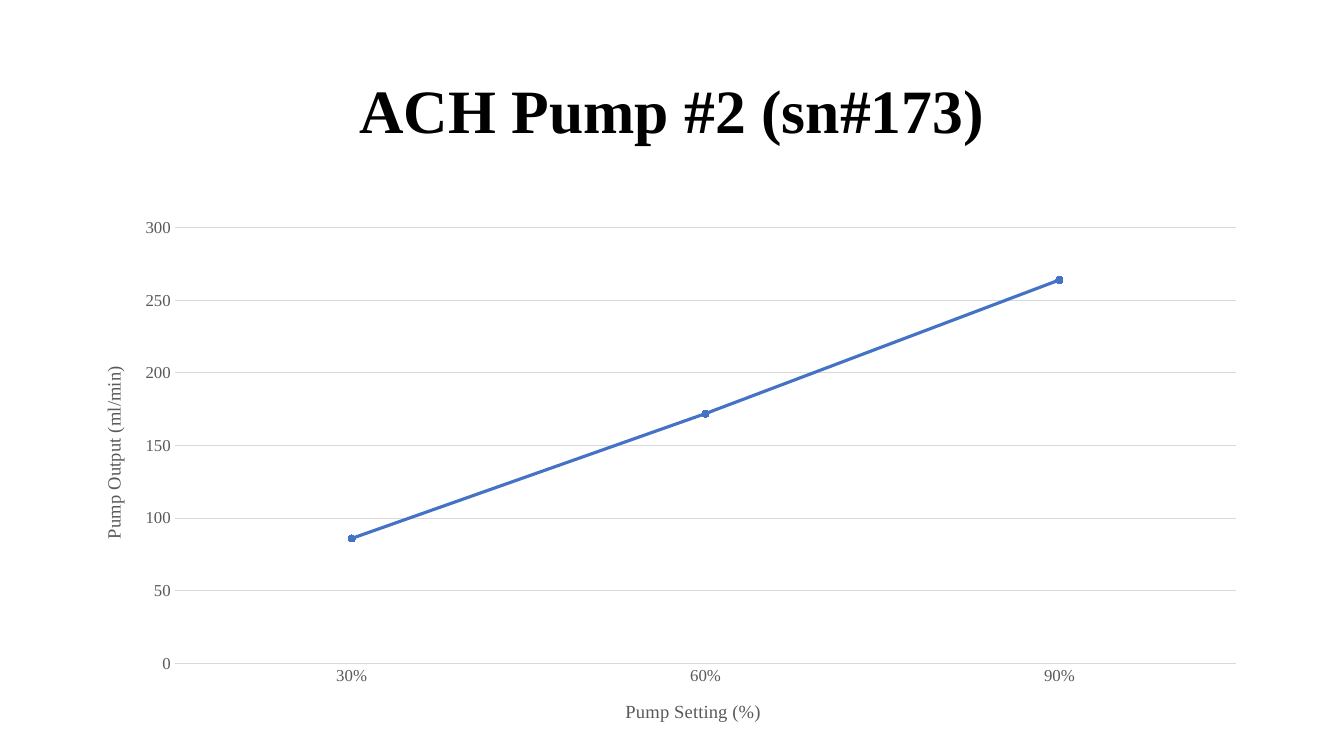
from pptx import Presentation
from pptx.chart.data import CategoryChartData
from pptx.dml.color import RGBColor
from pptx.enum.chart import XL_CHART_TYPE, XL_MARKER_STYLE, XL_TICK_MARK
from pptx.enum.text import MSO_ANCHOR, PP_ALIGN
from pptx.oxml import parse_xml
from pptx.oxml.ns import nsdecls, qn
from pptx.util import Pt

LINE_CHART = XL_CHART_TYPE.LINE_MARKERS_STACKED
CIRCLE = XL_MARKER_STYLE.CIRCLE
NO_TICK = XL_TICK_MARK.NONE
MIDDLE = MSO_ANCHOR.MIDDLE
CENTER = PP_ALIGN.CENTER

FACE = "Times New Roman"
BLACK, GREY, PALE, BLUE = "000000", "595959", "D9D9D9", "4472C4"
LEFT, WIDTH = 66, 828


def color(code):
    return RGBColor.from_string(code)


def style(font, size, code, bold=False):
    font.name, font.size, font.bold = FACE, Pt(size), bold
    font.color.rgb = color(code)


def write(frame, text, size=12, code=BLACK, bold=False, spacing=None):
    para = frame.paragraphs[0]
    para.alignment = CENTER
    para.line_spacing = spacing
    run = para.add_run()
    run.text = text
    style(run.font, size, code, bold)


def draw_line(line, code, width):
    line.color.rgb = color(code)
    line.width = Pt(width)


def make_layout(x, y, w=None, h=None):
    """Manual chart layout, in fractions of the chart's size."""
    parts = ['<c:layoutTarget val="inner"/>'] if w else []
    parts += ['<c:xMode val="edge"/>', '<c:yMode val="edge"/>']
    for tag, value in (("x", x), ("y", y), ("w", w), ("h", h)):
        if value is not None:
            parts.append(f'<c:{tag} val="{value}"/>')
    return parse_xml(f'<c:layout {nsdecls("c")}><c:manualLayout>'
                     f'{"".join(parts)}</c:manualLayout></c:layout>')


def drop_layout(node):
    for old in node.findall(qn("c:layout")):
        node.remove(old)


def format_axis(axis, title, x, y):
    axis.major_tick_mark = axis.minor_tick_mark = NO_TICK
    style(axis.tick_labels.font, 12, GREY)
    write(axis.axis_title.text_frame, title, size=13.3, code=GREY)
    node = axis.axis_title._element
    drop_layout(node)
    node.find(qn("c:tx")).addnext(make_layout(x, y))


def add_title(slide, text):
    title = slide.shapes.title
    title.left, title.top = Pt(LEFT), Pt(28.75)
    title.width, title.height = Pt(WIDTH), Pt(104.4)
    title.text_frame.word_wrap = True
    title.text_frame.vertical_anchor = MIDDLE
    write(title.text_frame, text, size=44, bold=True, spacing=0.9)


def add_graph(slide):
    data = CategoryChartData(number_format="General")
    data.categories = [0.3, 0.6, 0.9]
    data.categories.number_format = "0%"
    data.add_series("Series 1", [86, 172, 264])
    chart = slide.shapes.add_chart(
        LINE_CHART, Pt(LEFT), Pt(144), Pt(WIDTH), Pt(376), data).chart
    chart.has_legend = chart.has_title = False
    style(chart.font, 12, GREY)

    # Axes
    cat, val = chart.category_axis, chart.value_axis
    format_axis(cat, "Pump Setting (%)", 0.457, 0.945)
    cat.tick_labels.number_format = "0%"
    cat.tick_labels.number_format_is_linked = False
    draw_line(cat.format.line, PALE, 0.75)
    format_axis(val, "Pump Output (ml/min)", 0.005, 0.31)
    val.minimum_scale, val.maximum_scale, val.major_unit = 0, 300, 50
    val.format.line.fill.background()
    val.has_major_gridlines = True
    draw_line(val.major_gridlines.format.line, PALE, 0.75)

    # Plot and series
    area = chart._chartSpace.chart.plotArea
    drop_layout(area)
    area.insert(0, make_layout(0.071, 0.05, 0.916, 0.833))
    plot = chart.plots[0]
    plot.vary_by_categories = False
    series = plot.series[0]
    series.smooth = False
    draw_line(series.format.line, BLUE, 2.25)
    marker = series.marker
    marker.style, marker.size = CIRCLE, 5
    marker.format.fill.solid()
    marker.format.fill.fore_color.rgb = color(BLUE)
    draw_line(marker.format.line, BLUE, 0.75)


def main():
    deck = Presentation()
    deck.slide_width, deck.slide_height = Pt(960), Pt(540)
    slide = deck.slides.add_slide(deck.slide_layouts[5])
    add_title(slide, "ACH Pump #2 (sn#173)")
    add_graph(slide)
    deck.save("out.pptx")


if __name__ == "__main__":
    main()
